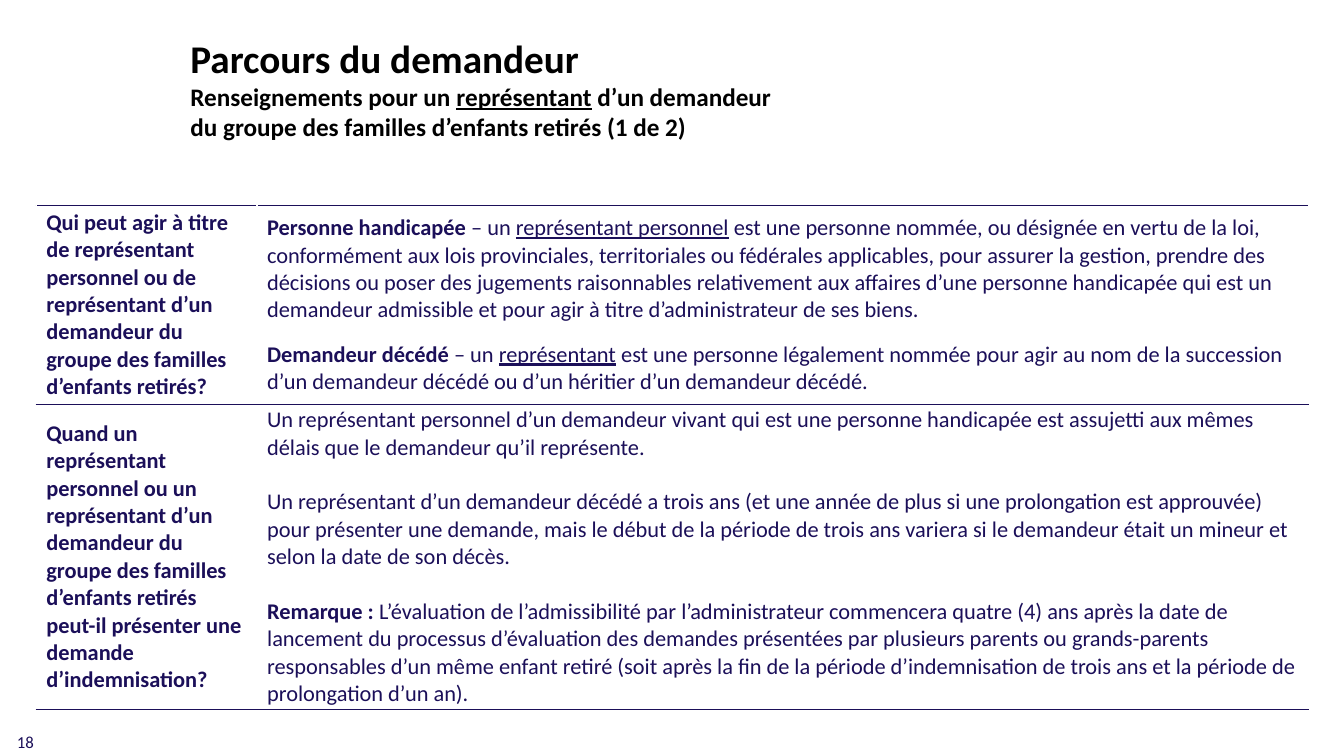
from lxml.etree import SubElement
from pptx import Presentation
from pptx.dml.color import RGBColor
from pptx.enum.text import MSO_ANCHOR
from pptx.oxml.ns import qn
from pptx.util import Inches, Pt

WIDTH, HEIGHT = 13.33, 7.5
NAVY, BLACK, WHITE = "1B0F59", "000000", "FFFFFF"


def color(value):
    return RGBColor.from_string(value)


def add_run(paragraph, text, font="Calibri", size=16, ink=NAVY, bold=False, underline=False):
    run = paragraph.add_run()
    run.text = text
    run.font.name = font
    run.font.size = Pt(size)
    run.font.color.rgb = color(ink)
    run.font.bold = bold
    run.font.underline = underline


class SlideBuilder:
    """Places text and tables on one slide, with lengths given as shares of its size."""

    def __init__(self, presentation):
        self.slide = presentation.slides.add_slide(presentation.slide_layouts[6])
        self.width = presentation.slide_width
        self.height = presentation.slide_height

    def area(self, left, top, width, height):
        return (int(left * self.width), int(top * self.height),
                int(width * self.width), int(height * self.height))

    def fill_frame(self, frame, paragraphs):
        frame.word_wrap = True
        for index, (runs, before, after) in enumerate(paragraphs):
            paragraph = frame.add_paragraph() if index else frame.paragraphs[0]
            paragraph.space_before = Pt(before)
            paragraph.space_after = Pt(after)
            for text, style in runs:
                add_run(paragraph, text, **style)

    def text(self, area, paragraphs):
        frame = self.slide.shapes.add_textbox(*self.area(*area)).text_frame
        frame.vertical_anchor = MSO_ANCHOR.MIDDLE
        self.fill_frame(frame, paragraphs)

    def border(self, cell, side, ink):
        properties = cell._tc.get_or_add_tcPr()
        line = SubElement(properties, qn(f"a:ln{side}"), w=str(Pt(1)))
        fill = SubElement(line, qn("a:solidFill"))
        SubElement(fill, qn("a:srgbClr"), val=ink)

    def table(self, area, column_shares, row_shares, rows):
        left, top, width, height = self.area(*area)
        table = self.slide.shapes.add_table(
            len(rows), len(column_shares), left, top, width, height).table
        table.first_row = table.horz_banding = False
        for column, share in zip(table.columns, column_shares):
            column.width = int(share * width)
        for row, share in zip(table.rows, row_shares):
            row.height = int(share * height)
        for row, contents in zip(table.rows, rows):
            for cell, paragraphs in zip(row.cells, contents):
                cell.vertical_anchor = MSO_ANCHOR.MIDDLE
                cell.margin_top = cell.margin_bottom = Inches(0.02)
                for side, ink in zip("LRTB", (WHITE, WHITE, NAVY, NAVY)):
                    self.border(cell, side, ink)
                cell.fill.background()
                self.fill_frame(cell.text_frame, paragraphs)


PLAIN, BOLD, UNDERLINED = {}, {"bold": True}, {"underline": True}
SUBTITLE = {"size": 18, "ink": BLACK, "bold": True}
LINE_GAP = 19.5

TITLE = [
    ([("Parcours du demandeur", {**SUBTITLE, "size": 28})], 0, 0),
    ([("Renseignements pour un ", SUBTITLE),
      ("représentant", {**SUBTITLE, **UNDERLINED}),
      (" d’un demandeur du groupe des familles d’enfants retirés (1 de 2)", SUBTITLE)], 0, 0),
]

WHO_QUESTION = [
    ([("Qui peut agir à titre de représentant personnel ou de représentant d’un demandeur "
       "du groupe des familles d’enfants retirés?", BOLD)], 0, 0),
]
WHO_ANSWER = [
    ([("Personne handicapée ", BOLD),
      ("– un ", PLAIN),
      ("représentant personnel", UNDERLINED),
      (" est une personne nommée, ou désignée en vertu de la loi, conformément aux lois "
       "provinciales, territoriales ou fédérales applicables, pour assurer la gestion, "
       "prendre des décisions ou poser des jugements raisonnables relativement aux affaires "
       "d’une personne handicapée qui est un demandeur admissible et pour agir à titre "
       "d’administrateur de ses biens.", PLAIN)], 0, 8),
    ([("Demandeur décédé ", BOLD),
      ("– un ", PLAIN),
      ("représentant", UNDERLINED),
      (" est une personne légalement nommée pour agir au nom de la succession d’un "
       "demandeur décédé ou d’un héritier d’un demandeur décédé.", PLAIN)], 4, 0),
]
WHEN_QUESTION = [
    ([("Quand un représentant personnel ou un représentant d’un demandeur du groupe des "
       "familles d’enfants retirés peut-il présenter une demande d’indemnisation?", BOLD)], 0, 0),
]
WHEN_ANSWER = [
    ([("Un représentant personnel d’un demandeur vivant qui est une personne handicapée est "
       "assujetti aux mêmes délais que le demandeur qu’il représente.", PLAIN)], 0, 0),
    ([("Un représentant d’un demandeur décédé a trois ans (et une année de plus si une "
       "prolongation est approuvée) pour présenter une demande, mais le début de la période "
       "de trois ans variera si le demandeur était un mineur et selon la date de son décès.",
       PLAIN)], LINE_GAP, 0),
    ([("Remarque :", BOLD),
      (" L’évaluation de l’admissibilité par l’administrateur commencera quatre (4) ans après "
       "la date de lancement du processus d’évaluation des demandes présentées par plusieurs "
       "parents ou grands-parents responsables d’un même enfant retiré (soit après la fin de "
       "la période d’indemnisation de trois ans et la période de prolongation d’un an).",
       PLAIN)], LINE_GAP, 0),
]


def main():
    presentation = Presentation()
    presentation.slide_width = Inches(WIDTH)
    presentation.slide_height = Inches(HEIGHT)
    builder = SlideBuilder(presentation)
    builder.text((1.79 / WIDTH, 0.28 / HEIGHT, 6.16 / WIDTH, 1.18 / HEIGHT), TITLE)
    builder.table((0.36 / WIDTH, 2.04 / HEIGHT, 12.62 / WIDTH, 5 / HEIGHT),
                  (2.19 / 12.62, 10.43 / 12.62), (1.97 / 5, 3.03 / 5),
                  [(WHO_QUESTION, WHO_ANSWER), (WHEN_QUESTION, WHEN_ANSWER)])
    builder.text((0.07 / WIDTH, 7.2 / HEIGHT, 3 / WIDTH, 0.32 / HEIGHT),
                 [([("18", {"size": 12})], 0, 0)])
    presentation.save("out.pptx")


if __name__ == "__main__":
    main()
